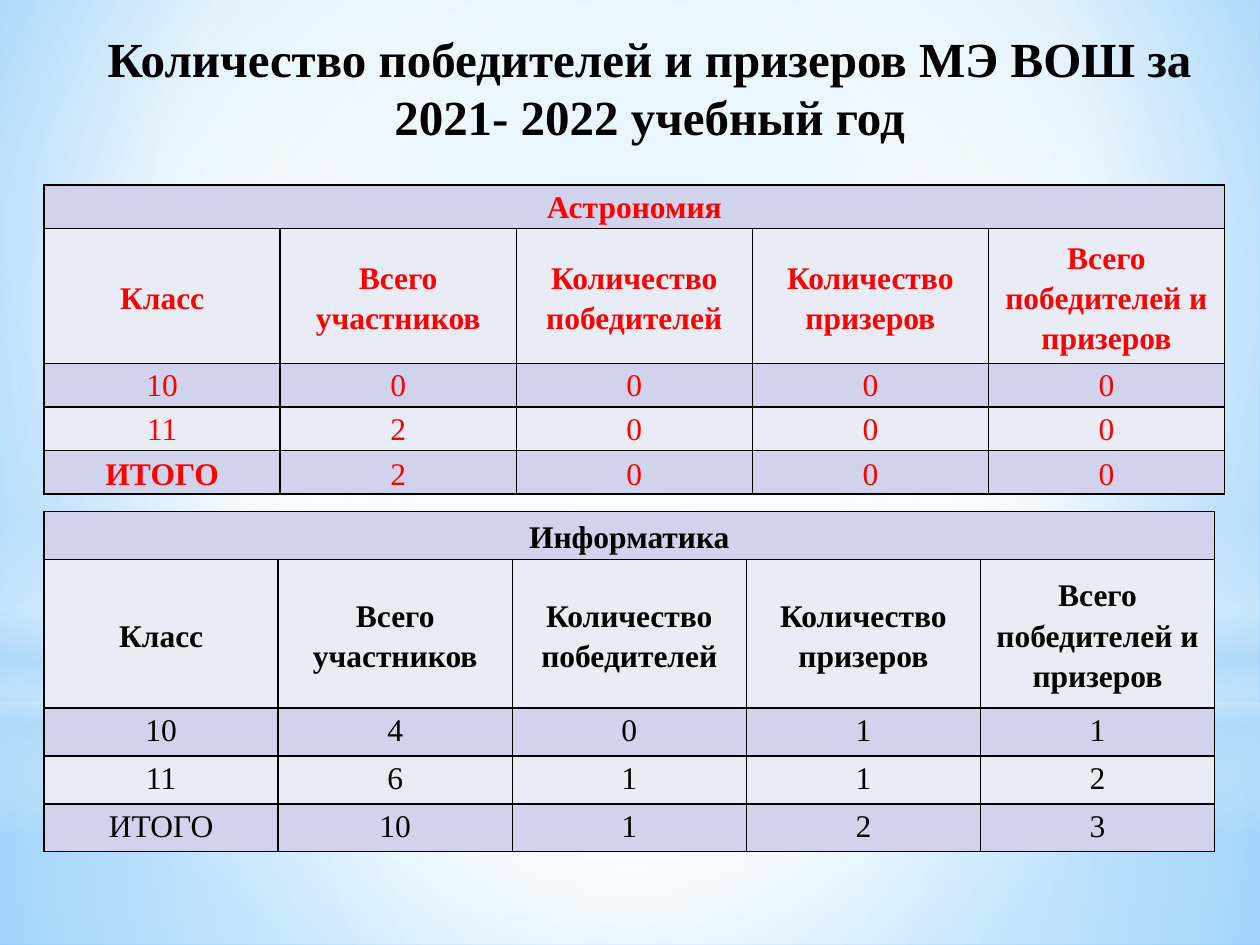
"""Build a slide with two olympiad result tables on a soft blue background."""
from lxml import etree
from pptx import Presentation
from pptx import util as u
from pptx.dml.color import RGBColor
from pptx.enum import shapes, text
from pptx.oxml.ns import qn

FONT = "Times New Roman"
COLORS = {
    "black": "000000", "red": "FF0000", "white": "FFFFFF", "haze": "B4DCFA",
    "sky": "9ED5FF", "blue": "5BB9FF", "odd_row": "D0D3EB", "even_row": "E9EBF5",
}
HEADERS = ["Класс", "Всего участников", "Количество победителей",
           "Количество призеров", "Всего победителей и призеров"]
CENTER = (50, 50, 50, 50)


def add_solid(parent, color):
    """Append a solid fill element."""
    fill = etree.SubElement(parent, qn("a:solidFill"))
    etree.SubElement(fill, qn("a:srgbClr"), val=COLORS[color])


def set_gradient(properties, stops, focus=None):
    """Replace a solid fill by a circular or, without focus, vertical gradient."""
    gradient = etree.Element(qn("a:gradFill"), rotWithShape="1")
    stop_list = etree.SubElement(gradient, qn("a:gsLst"))
    for position, color, opacity in stops:
        stop = etree.SubElement(stop_list, qn("a:gs"), pos=str(position * 1000))
        value = etree.SubElement(stop, qn("a:srgbClr"), val=COLORS[color])
        if opacity < 100:
            etree.SubElement(value, qn("a:alpha"), val=str(opacity * 1000))
    if focus:
        circle = etree.SubElement(gradient, qn("a:path"), path="circle")
        sides = {side: str(inset * 1000) for side, inset in zip("ltrb", focus)}
        etree.SubElement(circle, qn("a:fillToRect"), **sides)
    else:
        etree.SubElement(gradient, qn("a:lin"), ang="5400000", scaled="0")
    properties.replace(properties.find(qn("a:solidFill")), gradient)


def set_background(slide):
    """Fill the slide background with a circular gradient."""
    slide.background.fill.solid()
    properties = slide.element.find(".//" + qn("p:bgPr"))
    stops = [(0, "sky", 100), (60, "white", 100), (100, "blue", 100)]
    set_gradient(properties, stops, (20, 10, 20, 60))


def add_glow(slide, kind, top, height, stops, focus=None):
    """Add a full-width translucent gradient shape."""
    shape = slide.shapes.add_shape(
        kind, 0, u.Inches(top), u.Inches(10), u.Inches(height))
    shape.shadow.inherit = False
    shape.fill.solid()
    shape.line.fill.background()
    set_gradient(shape.element.spPr, stops, focus)


def write_text(frame, content, size, color="black", bold=False, spacing=1.0, after=0):
    """Write one centred paragraph."""
    paragraph = frame.paragraphs[0]
    paragraph.alignment = text.PP_ALIGN.CENTER
    paragraph.line_spacing = spacing
    paragraph.space_after = u.Pt(after)
    run = paragraph.add_run()
    run.text = content
    run.font.name = FONT
    run.font.size = u.Pt(size)
    run.font.bold = bold
    run.font.color.rgb = RGBColor.from_string(COLORS[color])


def add_title(slide, content):
    """Add the slide title."""
    box = slide.shapes.add_textbox(
        u.Inches(0.31), u.Inches(0.13), u.Inches(9.69), u.Inches(1.12))
    box.text_frame.word_wrap = True
    box.text_frame.vertical_anchor = text.MSO_ANCHOR.MIDDLE
    write_text(box.text_frame, content, 28, bold=True)


def set_borders(cell):
    """Draw thin black lines on every side of a cell."""
    properties = cell._tc.get_or_add_tcPr()
    for index, side in enumerate(("lnL", "lnR", "lnT", "lnB")):
        line = etree.Element(qn("a:" + side), w=str(u.Pt(1)))
        add_solid(line, "black")
        properties.insert(index, line)


def format_cell(cell, row, middle):
    """Set the fill, borders, margins and anchor of a cell."""
    color = COLORS["even_row" if row % 2 else "odd_row"]
    cell.fill.solid()
    cell.fill.fore_color.rgb = RGBColor.from_string(color)
    set_borders(cell)
    cell.margin_left = cell.margin_right = u.Inches(0.07 if row < 2 else 0.08)
    cell.margin_top = cell.margin_bottom = 0
    cell.vertical_anchor = text.MSO_ANCHOR.MIDDLE if middle else text.MSO_ANCHOR.TOP


def add_results(slide, subject, results, top, width, heights, color,
                middle_rows, bold_total=False):
    """Add a subject table with a merged heading row."""
    rows = [[subject], HEADERS] + results
    table = slide.shapes.add_table(
        len(rows), len(HEADERS), u.Inches(0.35), u.Inches(top),
        u.Inches(width), u.Inches(sum(heights))).table
    for column in table.columns:
        column.width = u.Inches(width / len(HEADERS))
    for row, height in enumerate(heights):
        table.rows[row].height = u.Inches(height)
        for column in range(len(HEADERS)):
            format_cell(table.cell(row, column), row, row in middle_rows)
        for column, content in enumerate(rows[row]):
            bold = row < 2 or (bold_total and content == "ИТОГО")
            after = 10 if row < 2 or row in middle_rows else 0
            write_text(table.cell(row, column).text_frame, content, 18, color,
                       bold, spacing=1.15, after=after)
    table.cell(0, 0).merge(table.cell(0, len(HEADERS) - 1))


def main():
    """Build and save the slide."""
    presentation = Presentation()
    presentation.slide_width = u.Inches(10)
    presentation.slide_height = u.Inches(7.5)
    slide = presentation.slides.add_slide(presentation.slide_layouts[6])
    rectangle = shapes.MSO_SHAPE.RECTANGLE
    set_background(slide)
    add_glow(slide, rectangle, 5.58, 1.92,
             [(0, "white", 91), (37, "white", 76), (100, "haze", 79)], CENTER)
    add_glow(slide, rectangle, 0, 5.58,
             [(0, "white", 89), (48, "white", 62), (100, "haze", 79)], CENTER)
    add_glow(slide, rectangle, 4.12, 2.5,
             [(0, "white", 0), (29, "white", 30), (45, "haze", 40),
              (55, "white", 26), (65, "haze", 60), (100, "white", 0)])
    add_glow(slide, shapes.MSO_SHAPE.OVAL, 1.75, 5.58,
             [(0, "white", 100), (56, "white", 0)], CENTER)
    add_title(slide, "Количество победителей и призеров МЭ ВОШ за 2021- 2022 учебный год")
    astronomy = [["10", "0", "0", "0", "0"],
                 ["11", "2", "0", "0", "0"],
                 ["ИТОГО", "2", "0", "0", "0"]]
    informatics = [["10", "4", "0", "1", "1"],
                   ["11", "6", "1", "1", "2"],
                   ["ИТОГО", "10", "1", "2", "3"]]
    add_results(slide, "Астрономия", astronomy, 1.47, 9.37,
                [0.3, 1.07, 0.3, 0.3, 0.3], "red", (1, 4), bold_total=True)
    add_results(slide, "Информатика", informatics, 4.06, 9.29,
                [0.38, 1.18, 0.38, 0.38, 0.38], "black", (0, 1))
    presentation.save("out.pptx")


if __name__ == "__main__":
    main()
